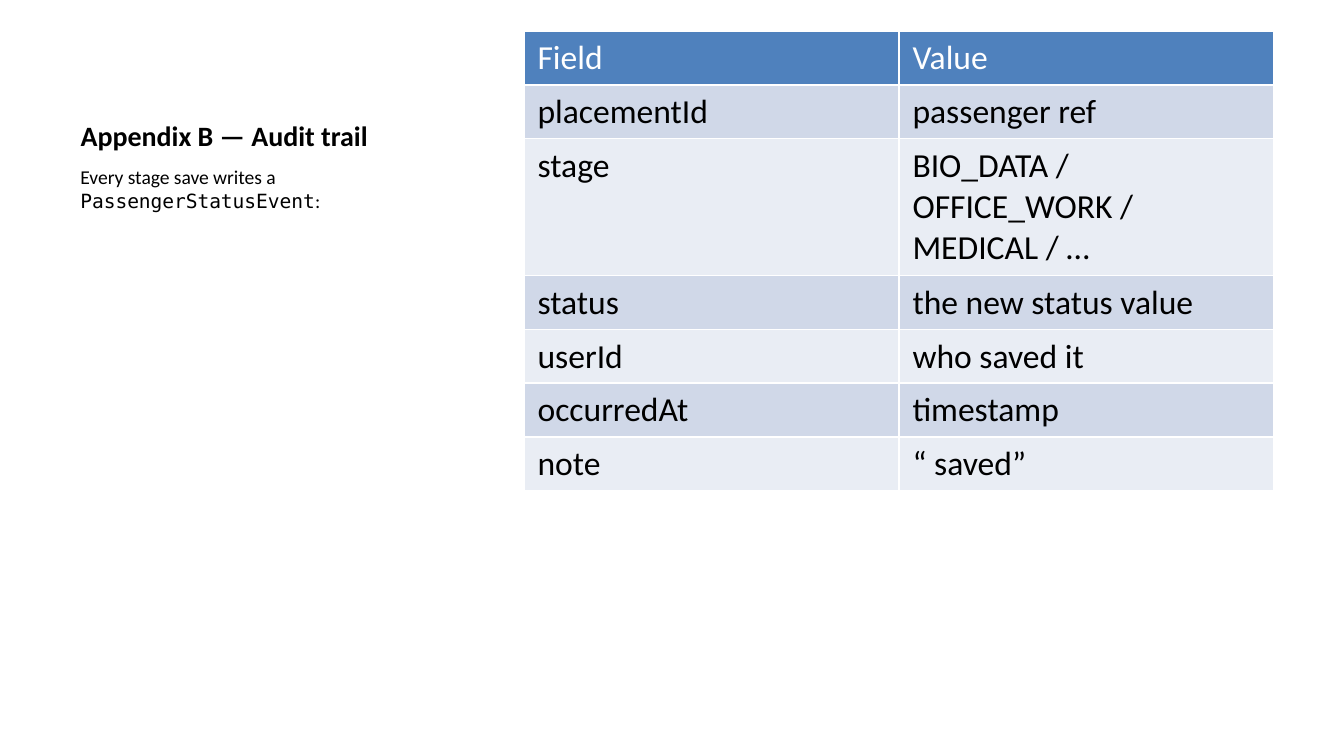
from lxml.etree import SubElement
from pptx import Presentation
from pptx.dml.color import RGBColor
from pptx.enum.text import MSO_ANCHOR, PP_ALIGN
from pptx.oxml.ns import qn
from pptx.util import Inches, Pt

# Content
TITLE = "Appendix B — Audit trail"
BODY = [
    ("Every stage save writes a ", "Calibri"),
    ("PassengerStatusEvent", "DejaVu Sans Mono"),
    (":", "Calibri"),
]
ROWS = [
    ("Field", "Value"),
    ("placementId", "passenger ref"),
    ("stage", "BIO_DATA / OFFICE_WORK / MEDICAL / …"),
    ("status", "the new status value"),
    ("userId", "who saved it"),
    ("occurredAt", "timestamp"),
    ("note", "“ saved”"),
]
COLORS = {
    "text": "000000",
    "white": "FFFFFF",
    "header": "4F81BD",
    "odd": "D0D8E8",
    "even": "E9EDF4",
}
TOP = Inches(0.23)
ROW_HEIGHT, TALL_ROW_HEIGHT, TALL_ROW = Inches(0.4), Inches(1.02), 2


def style_run(run, size, color="text", bold=False, font="Calibri"):
    run.font.name = font
    run.font.size = Pt(size)
    run.font.bold = bold
    run.font.color.rgb = RGBColor.from_string(COLORS[color])


def add_borders(cell):
    properties = cell._tc.get_or_add_tcPr()
    for side in ("lnL", "lnR", "lnT", "lnB"):
        line = SubElement(properties, qn(f"a:{side}"), w=str(Pt(1)))
        fill = SubElement(line, qn("a:solidFill"))
        SubElement(fill, qn("a:srgbClr"), val=COLORS["white"])


# Widescreen 16:9 slide
presentation = Presentation()
presentation.slide_width = Inches(10)
presentation.slide_height = Inches(10) * 9 // 16
slide = presentation.slides.add_slide(presentation.slide_layouts[5])

# Title
title = slide.shapes.title
title.left, title.top = Inches(0.5), TOP
title.width, title.height = Inches(3.29), Inches(0.95)
title.text_frame.text = TITLE
title.text_frame.vertical_anchor = MSO_ANCHOR.BOTTOM
paragraph = title.text_frame.paragraphs[0]
paragraph.alignment = PP_ALIGN.LEFT
style_run(paragraph.runs[0], 15, bold=True)

# Introduction
body = slide.shapes.add_textbox(Inches(0.5), Inches(1.18), Inches(3.29), Inches(3.85))
body.text_frame.word_wrap = True
for text, font in BODY:
    run = body.text_frame.paragraphs[0].add_run()
    run.text = text
    style_run(run, 10.5, font=font)

# Field table
total_height = ROW_HEIGHT * (len(ROWS) - 1) + TALL_ROW_HEIGHT
table = slide.shapes.add_table(
    len(ROWS), 2, Inches(3.9), TOP, Inches(5.58), total_height
).table
for row_index, values in enumerate(ROWS):
    table.rows[row_index].height = TALL_ROW_HEIGHT if row_index == TALL_ROW else ROW_HEIGHT
    band = "header" if row_index == 0 else ("even", "odd")[row_index % 2]
    text_color = "white" if row_index == 0 else "text"
    for column_index, value in enumerate(values):
        cell = table.cell(row_index, column_index)
        cell.text_frame.text = value
        style_run(cell.text_frame.paragraphs[0].runs[0], 18, text_color)
        add_borders(cell)
        cell.fill.solid()
        cell.fill.fore_color.rgb = RGBColor.from_string(COLORS[band])

presentation.save("out.pptx")
